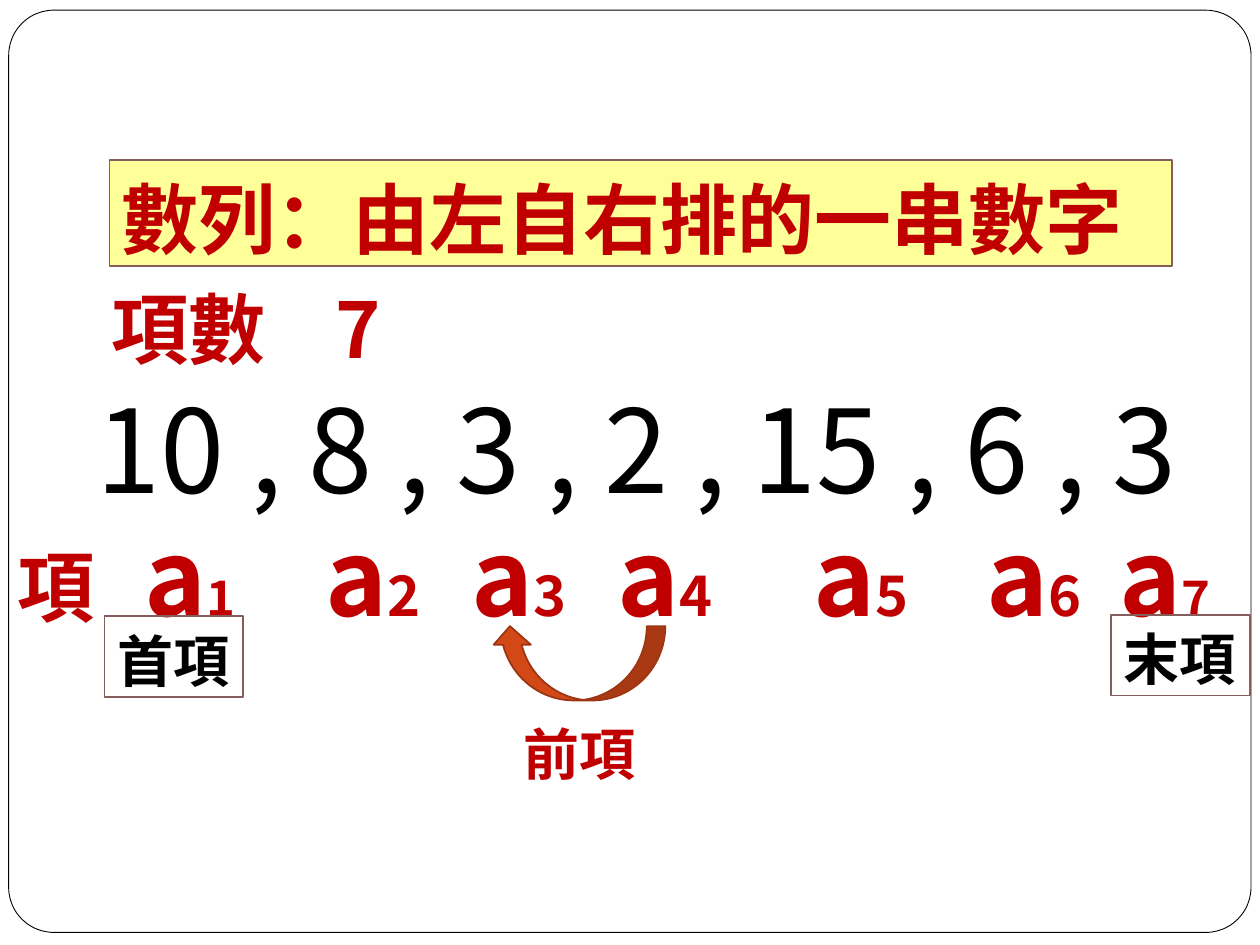
from pptx import Presentation
from pptx.dml.color import RGBColor as RGB
from pptx.enum.shapes import MSO_SHAPE as Shape
from pptx.enum.text import MSO_ANCHOR as Anchor
from pptx.oxml.ns import qn
from pptx.util import Pt
from lxml.etree import SubElement as Sub

FONT = "Noto Sans CJK SC"
RED = RGB(0xC0, 0x00, 0x00)
BLACK = RGB(0x00, 0x00, 0x00)
WHITE = RGB(0xFF, 0xFF, 0xFF)
YELLOW = RGB(0xFF, 0xFF, 0x99)
BROWN = RGB(0x85, 0x5D, 0x5D)
ORANGE = RGB(0xD3, 0x48, 0x17)
RUST = RGB(0x9C, 0x35, 0x11)
LEAD = 1.27


def add_run(para, text, size=44, color=RED, bold=True):
    run = para.add_run()
    run.text = text
    font = run.font
    font.name, font.size, font.bold = FONT, Pt(size), bold
    font.color.rgb = color
    Sub(font._element, qn("a:ea")).set("typeface", FONT)


def set_tabs(para, stops):
    tabs = Sub(para._p.get_or_add_pPr(), qn("a:tabLst"))
    for stop in stops:
        tab = Sub(tabs, qn("a:tab"))
        tab.set("pos", str(int(Pt(stop))))
        tab.set("algn", "l")


def add_block(slide, kind, box, fill=None, line=None, width=1):
    shape = slide.shapes.add_shape(kind, *map(Pt, box))
    shape.shadow.inherit = False
    if fill is None:
        shape.fill.background()
    else:
        shape.fill.solid()
        shape.fill.fore_color.rgb = fill
    if line is None:
        shape.line.fill.background()
    else:
        shape.line.color.rgb = line
        shape.line.width = Pt(width)
    return shape


def get_para(shape, size):
    frame = shape.text_frame
    frame.word_wrap = True
    frame.vertical_anchor = Anchor.TOP
    para = frame.paragraphs[0]
    para.alignment = 1
    para.line_spacing = Pt(round(size * LEAD, 1))
    return para


def add_label(slide, box, text, size=44, fill=None, line=None, **style):
    shape = add_block(slide, Shape.RECTANGLE, box, fill, line)
    add_run(get_para(shape, size), text, size, **style)


def add_text(slide, box, size):
    return get_para(slide.shapes.add_textbox(*map(Pt, box)), size)


def add_frame(slide, box):
    frame = add_block(slide, Shape.ROUNDED_RECTANGLE, box, WHITE, BLACK, 0.5)
    frame.adjustments[0] = 0.049


def add_count(slide, box):
    para = add_text(slide, box, 44)
    set_tabs(para, [128])
    add_run(para, "項數\t7")


def add_terms(slide, box):
    para = add_text(slide, box, 60)
    set_tabs(para, [72.5, 176, 259.5, 343, 455, 553.5, 629.5])
    add_run(para, "項")
    for num, size in enumerate([28, 32, 32, 32, 32, 32, 28], 1):
        add_run(para, "\ta", 60)
        add_run(para, str(num), size)


def add_numbers(slide, box):
    para = add_text(slide, box, 66)
    add_run(para, "10 , 8 , 3 , 2 , 15 , 6 , 3", 66, BLACK, False)


def add_arrow(slide, box):
    arrow = add_block(slide, Shape.CURVED_UP_ARROW, box, ORANGE, RUST)
    arrow.element.spPr.find(qn("a:xfrm")).set("flipH", "1")


def main():
    prs = Presentation()
    prs.slide_width, prs.slide_height = Pt(720), Pt(540)
    slide = prs.slides.add_slide(prs.slide_layouts[6])
    add_frame(slide, (5, 5.8, 709.9, 527))
    add_label(slide, (62.6, 91.4, 607, 60.5), "數列：由左自右排的一串數字",
              fill=YELLOW, line=BROWN)
    add_terms(slide, (2.9, 284.4, 702.7, 79.9))
    add_numbers(slide, (48.2, 208.1, 657.4, 87.1))
    for box, text in [((59.8, 352.1, 79.2, 46.1), "首項"),
                      ((635, 351.4, 79.2, 46.1), "末項")]:
        add_label(slide, box, text, 32, line=BROWN, color=BLACK)
    add_arrow(slide, (280.8, 357.8, 99.4, 42.5))
    add_label(slide, (292.3, 405.4, 82.8, 46.1), "前項", 32, line=WHITE)
    add_count(slide, (56.9, 154.1, 607, 60.5))
    prs.save("out.pptx")


if __name__ == "__main__":
    main()
